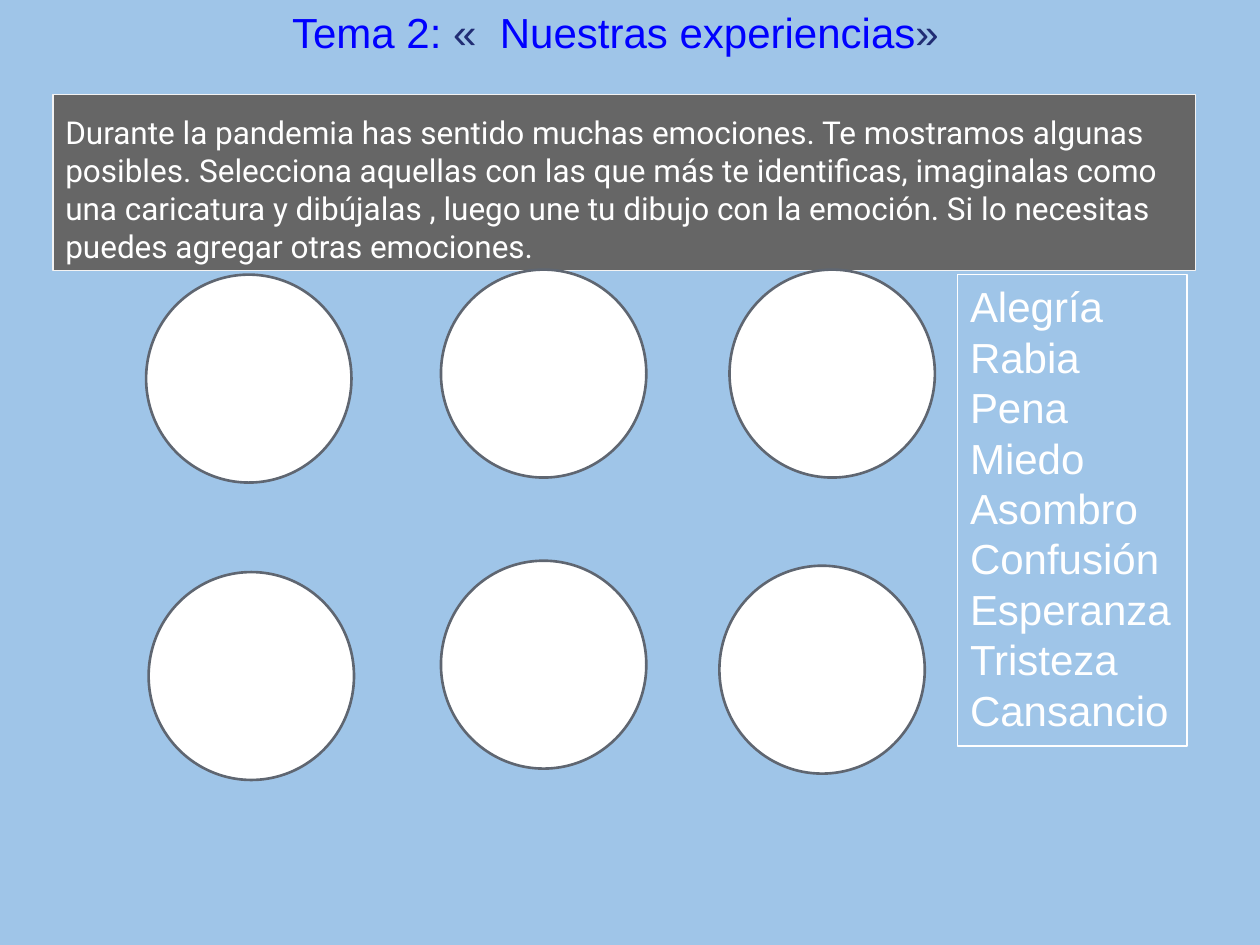
from pptx import Presentation
from pptx.dml.color import RGBColor
from pptx.enum.shapes import MSO_SHAPE
from pptx.enum.text import MSO_ANCHOR, PP_ALIGN
from pptx.util import Inches, Pt

PROMPT = (
    "Durante la pandemia has sentido muchas emociones. Te mostramos algunas posibles. "
    "Selecciona aquellas con las que más te identificas, imaginalas como una caricatura "
    "y dibújalas , luego une tu dibujo con la emoción. Si lo necesitas puedes agregar "
    "otras emociones."
)
MOODS = ["Alegría", "Rabia", "Pena", "Miedo", "Asombro",
         "Confusión", "Esperanza", "Tristeza", "Cansancio"]
FACES = [(1.16, 2.18), (3.5, 2.14), (5.79, 2.14),
         (1.18, 4.54), (3.5, 4.45), (5.71, 4.49)]
TITLE = [("Tema 2: ", "0000FF"), ("« ", "212D74"),
         (" Nuestras experiencias", "0000FF"), ("»", "212D74")]


def paint(fill, color):
    """Give a fill a solid hex colour."""
    fill.solid()
    fill.fore_color.rgb = RGBColor.from_string(color)


def add_form(slide, kind, box, fill, line, width):
    """Add an outlined shape, left clear when fill is None."""
    form = slide.shapes.add_shape(kind, *map(Inches, box))
    form.shadow.inherit = False
    if fill:
        paint(form.fill, fill)
    else:
        form.fill.background()
    paint(form.line.fill, line)
    form.line.width = Pt(width)
    return form


def set_frame(form, anchor, inset):
    """Wrap the text of a shape and set its anchor and vertical insets."""
    frame = form.text_frame
    frame.word_wrap = True
    frame.vertical_anchor = anchor
    frame.margin_left = frame.margin_right = Inches(0.1)
    frame.margin_top = frame.margin_bottom = Inches(inset)
    return frame


def write(frame, lines, size, face, align=PP_ALIGN.LEFT):
    """Write lines, each a list of text and colour runs."""
    for i, line in enumerate(lines):
        para = frame.paragraphs[0] if i == 0 else frame.add_paragraph()
        para.alignment = align
        for text, color in line:
            run = para.add_run()
            run.text = text
            run.font.size = Pt(size)
            run.font.name = face
            paint(run.font.fill, color)


def add_title(slide):
    """Add the centred heading."""
    box = slide.shapes.add_textbox(*map(Inches, (0.35, 0, 9.07, 0.57)))
    frame = set_frame(box, MSO_ANCHOR.TOP, 0.1)
    write(frame, [TITLE], 24, "Arial", PP_ALIGN.CENTER)
    frame.paragraphs[0].line_spacing = 0.9


def add_prompt(slide):
    """Add the grey panel with the task."""
    form = add_form(slide, MSO_SHAPE.RECTANGLE, (0.42, 0.75, 9.07, 1.4),
                    "666666", "F3F3F3", 0.75)
    frame = set_frame(form, MSO_ANCHOR.BOTTOM, 0.05)
    write(frame, [[(PROMPT, "FFFFFF")]], 18, "Roboto")


def add_moods(slide):
    """Add the framed list of emotions."""
    form = add_form(slide, MSO_SHAPE.RECTANGLE, (7.6, 2.18, 1.82, 3.74),
                    None, "FFFFFF", 1)
    frame = set_frame(form, MSO_ANCHOR.TOP, 0.05)
    write(frame, [[(mood, "FFFFFF")] for mood in MOODS], 24, "Arial")


def main():
    """Build and save the slide."""
    deck = Presentation()
    deck.slide_width, deck.slide_height = Inches(10), Inches(7.5)
    slide = deck.slides.add_slide(deck.slide_layouts[6])
    paint(slide.background.fill, "9FC5E8")
    add_prompt(slide)
    for left, top in FACES:
        add_form(slide, MSO_SHAPE.OVAL, (left, top, 1.63, 1.65),
                 "FFFFFF", "5F6671", 1.5)
    add_moods(slide)
    add_title(slide)
    deck.save("out.pptx")


if __name__ == "__main__":
    main()
